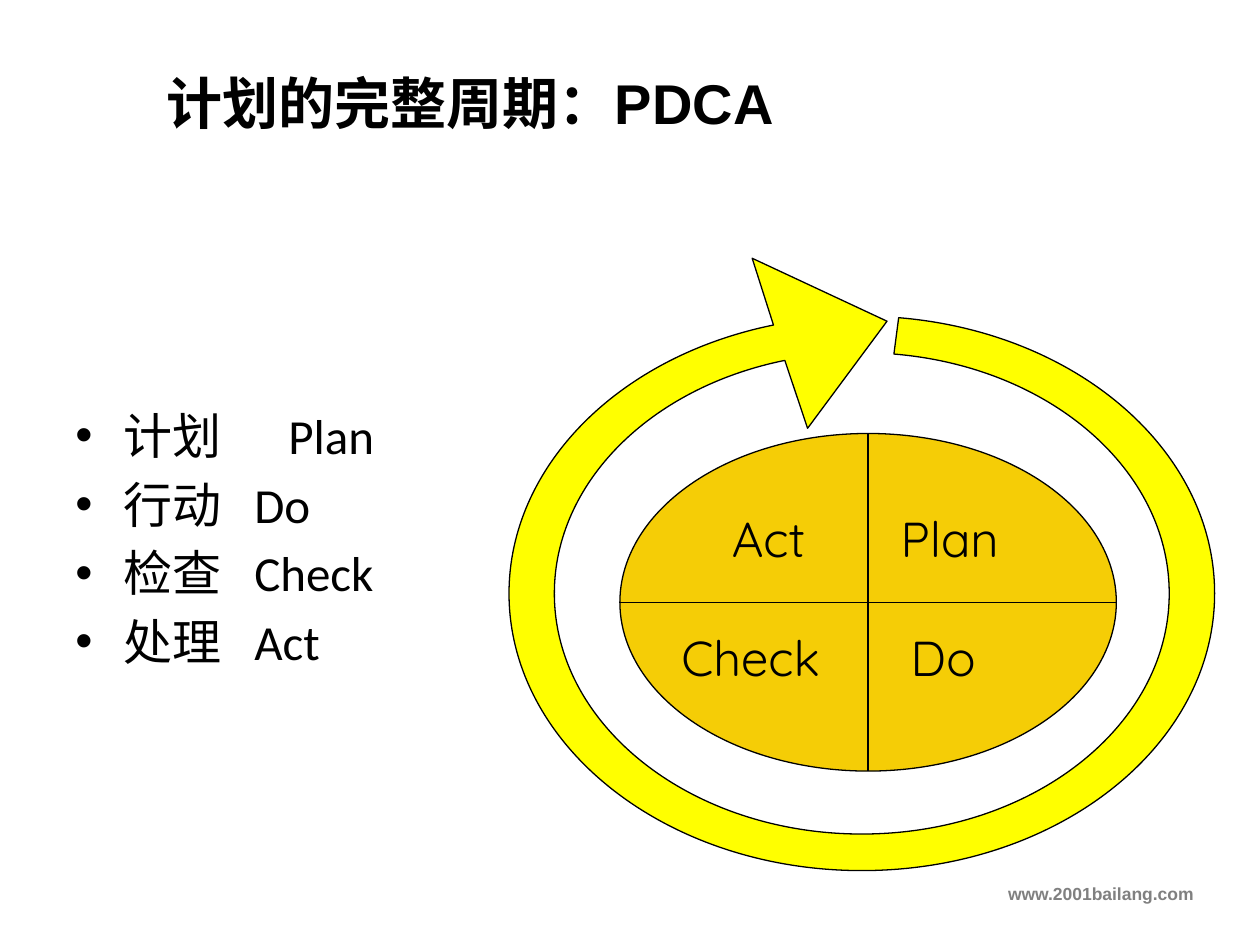
from dataclasses import dataclass
from itertools import pairwise
from math import cos, radians, sin, tan

from lxml.etree import SubElement
from pptx import Presentation
from pptx.dml.color import RGBColor
from pptx.enum.shapes import MSO_SHAPE as Preset
from pptx.enum.text import MSO_ANCHOR as Anchor, MSO_AUTO_SIZE as AutoSize, PP_ALIGN as Align
from pptx.oxml.ns import qn
from pptx.util import Inches, Pt


@dataclass(frozen=True)
class Theme:
    black: RGBColor = RGBColor(0, 0, 0)
    grey: RGBColor = RGBColor(0x80, 0x80, 0x80)
    yellow: RGBColor = RGBColor(0xFF, 0xFF, 0)
    gold: RGBColor = RGBColor(0xF5, 0xCD, 0x06)
    title_size: Pt = Pt(32)
    text_size: Pt = Pt(28)
    footer_size: Pt = Pt(10)
    line_width: Pt = Pt(0.75)


@dataclass(frozen=True)
class Box:
    left: float
    top: float
    width: float
    height: float

    def lengths(self) -> list:
        return [Inches(value) for value in (self.left, self.top, self.width, self.height)]


@dataclass(frozen=True)
class Step:
    chinese: str
    english: str
    tab: float
    label: Box


@dataclass(frozen=True)
class Ellipse:
    center_x: float
    center_y: float
    radius_x: float
    radius_y: float

    def point(self, angle: float, pull: float = 0) -> tuple:
        """Point at an angle in radians, moved along the tangent by pull."""
        return (self.center_x + self.radius_x * (cos(angle) - pull * sin(angle)),
                self.center_y + self.radius_y * (sin(angle) + pull * cos(angle)))

    def arc(self, degrees: list) -> list:
        """One Bezier curve (two control points and an end) between neighbouring angles."""
        curves = []
        for start, end in pairwise(map(radians, degrees)):
            pull = 4 / 3 * tan((end - start) / 4)
            curves.append([self.point(start, pull), self.point(end, -pull), self.point(end)])
        return curves


THEME = Theme()
STEPS = [
    Step("计划", "Plan", 1.69, Box(7.05, 3.99, 1.1, 0.63)),
    Step("行动", "Do", 1.42, Box(7.13, 4.93, 0.87, 0.55)),
    Step("检查", "Check", 1.42, Box(5.31, 4.93, 1.42, 0.71)),
    Step("处理", "Act", 1.42, Box(5.71, 3.99, 0.94, 0.63)),
]
RING_ANGLES = [-84, 0, 90, 180, 255.5]
RING_OUTER = Ellipse(6.84, 4.71, 2.8, 2.2)
RING_INNER = Ellipse(6.84, 4.71, 2.44, 1.91)
ARROWHEAD = [(5.97, 2.05), (7.04, 2.55), (6.41, 3.4)]


def set_font(font, color: RGBColor = THEME.black, **values) -> None:
    for name, value in values.items():
        setattr(font, name, value)
    font.color.rgb = color


def add_text(slide, box: Box, text: str, align: Align = Align.LEFT, **font_values) -> None:
    frame = slide.shapes.add_textbox(*box.lengths()).text_frame
    frame.word_wrap = True
    paragraph = frame.paragraphs[0]
    paragraph.text = text
    paragraph.alignment = align
    set_font(paragraph.runs[0].font, **font_values)


def add_title(slide, box: Box, text: str) -> None:
    title = slide.shapes.title
    title.left, title.top, title.width, title.height = box.lengths()
    frame = title.text_frame
    frame.text = text
    for name, value in {"auto_size": AutoSize.NONE, "word_wrap": True,
                        "vertical_anchor": Anchor.MIDDLE}.items():
        setattr(frame, name, value)
    frame.paragraphs[0].alignment = Align.LEFT
    set_font(frame.paragraphs[0].runs[0].font, name="Arial", size=THEME.title_size, bold=True)


def add_bullet_and_tab(paragraph, tab: float) -> None:
    properties = paragraph._p.get_or_add_pPr()
    properties.set("marL", str(Inches(0.38)))
    properties.set("indent", str(Inches(-0.38)))
    SubElement(properties, qn("a:buFont"), typeface="Arial")
    SubElement(properties, qn("a:buChar"), char="•")
    tabs = SubElement(properties, qn("a:tabLst"))
    SubElement(tabs, qn("a:tab"), pos=str(Inches(tab)), algn="l")


def add_step_list(slide, box: Box) -> None:
    frame = slide.shapes.add_textbox(*box.lengths()).text_frame
    frame.word_wrap = True
    for index, step in enumerate(STEPS):
        paragraph = frame.add_paragraph() if index else frame.paragraphs[0]
        add_bullet_and_tab(paragraph, step.tab)
        if index:
            paragraph.space_before = Pt(5.6)
        for text, font_name in ((step.chinese + "\t", "Arial"), (step.english, "Calibri")):
            run = paragraph.add_run()
            run.text = text
            set_font(run.font, name=font_name, size=THEME.text_size)


def style_shape(shape, fill: RGBColor) -> None:
    shape.shadow.inherit = False
    shape.fill.solid()
    shape.fill.fore_color.rgb = fill
    shape.line.color.rgb = THEME.black
    shape.line.width = THEME.line_width


def add_outline(slide, start: tuple, segments: list):
    """Closed freeform; a segment of three points is a curve, of one point a line."""
    points = [(Inches(x), Inches(y)) for segment in segments for x, y in segment]
    builder = slide.shapes.build_freeform(*map(Inches, start))
    builder.add_line_segments(points, close=True)
    shape = builder.convert_to_shape()
    lines = iter(list(shape._element.iter(qn("a:lnTo"))))
    for segment in segments:
        first, *others = [next(lines) for _ in segment]
        if others:
            curve = first.getparent().makeelement(qn("a:cubicBezTo"))
            first.addprevious(curve)
            for line in (first, *others):
                curve.append(line[0])
                line.getparent().remove(line)
    return shape


def add_cycle_arrow(slide) -> None:
    inner_start = RING_INNER.point(radians(RING_ANGLES[-1]))
    outer_start = RING_OUTER.point(radians(RING_ANGLES[0]))
    segments = [*RING_INNER.arc(RING_ANGLES[::-1]), [outer_start],
                *RING_OUTER.arc(RING_ANGLES), *([corner] for corner in ARROWHEAD)]
    style_shape(add_outline(slide, inner_start, segments), THEME.yellow)


def main() -> None:
    presentation = Presentation()
    presentation.slide_width, presentation.slide_height = Inches(10), Inches(7.5)
    slide = presentation.slides.add_slide(presentation.slide_layouts[5])

    add_text(slide, Box(0, 6.96, 9.57, 0.35), "www.2001bailang.com", Align.RIGHT,
             name="Arial", size=THEME.footer_size, bold=True, color=THEME.grey)
    add_title(slide, Box(1.22, 0.5, 6.77, 0.62), "计划的完整周期：PDCA")
    add_step_list(slide, Box(0.5, 3.17, 3.08, 2.47))
    add_cycle_arrow(slide)
    wheel = slide.shapes.add_shape(Preset.FLOWCHART_OR, *Box(4.92, 3.44, 3.94, 2.68).lengths())
    style_shape(wheel, THEME.gold)
    for step in STEPS:
        add_text(slide, step.label, step.english, name="Quicksand", size=THEME.text_size)

    presentation.save("out.pptx")


if __name__ == "__main__":
    main()
